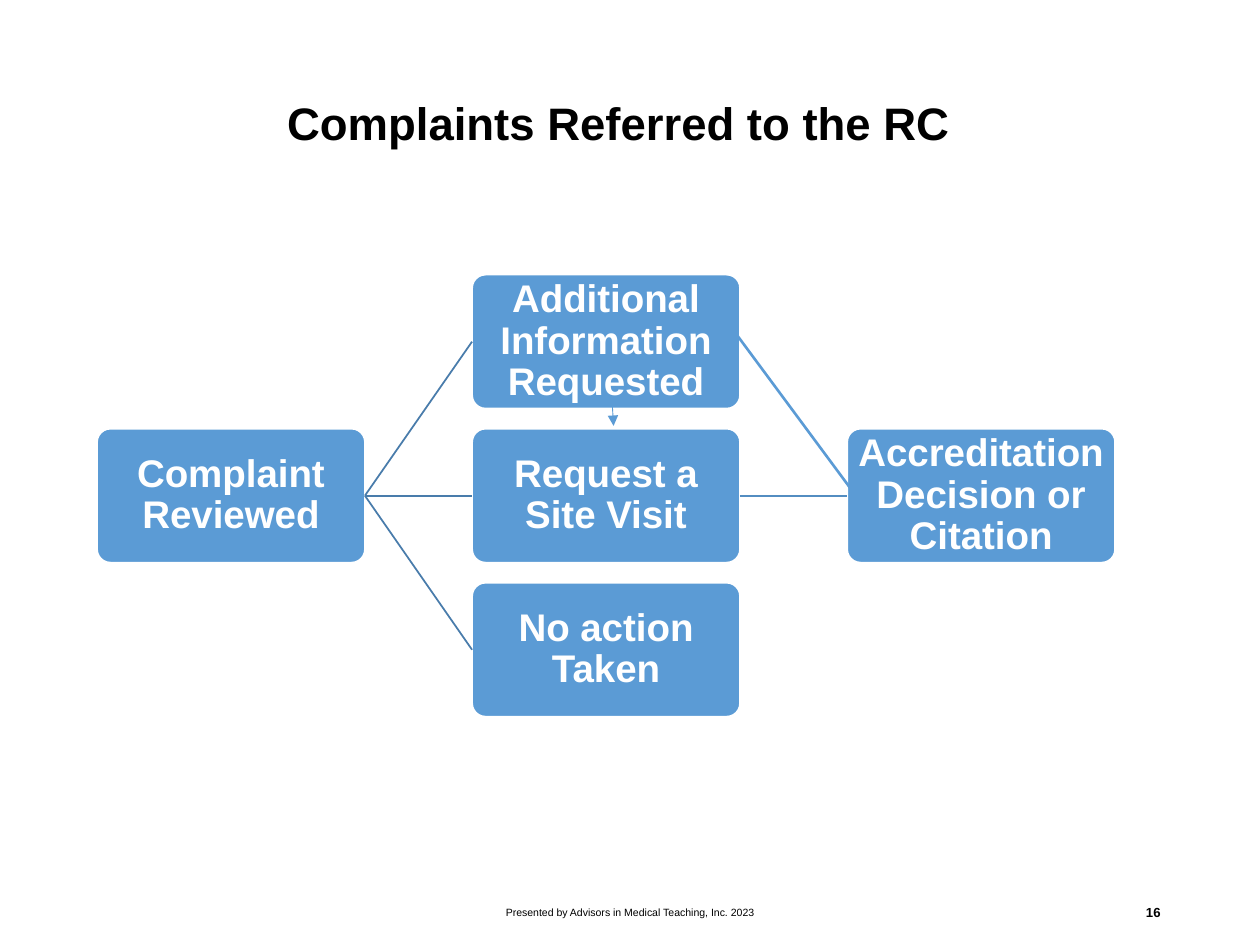
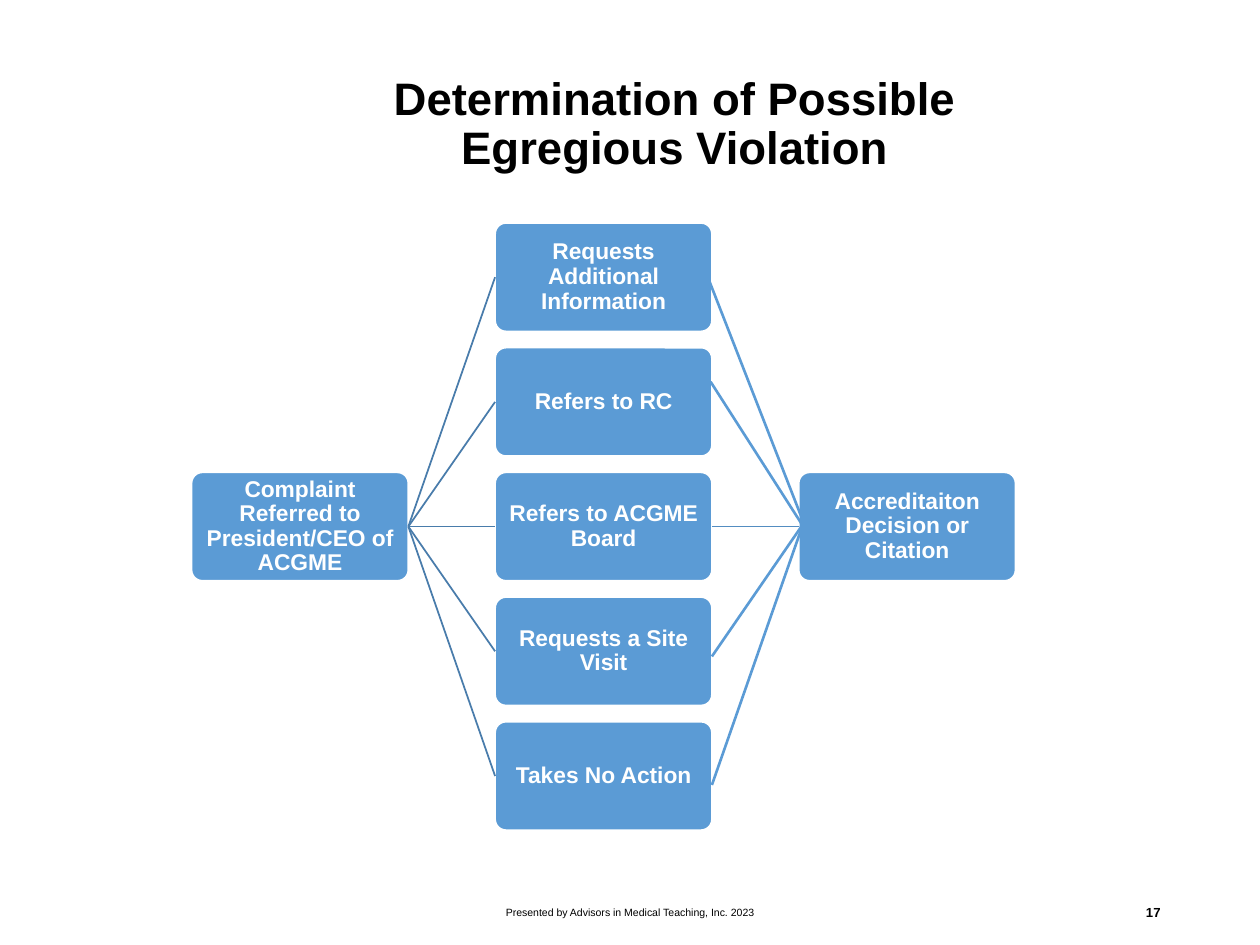
from dataclasses import dataclass

import lxml.etree
import pptx
import pptx.dml.color
import pptx.enum.shapes
import pptx.enum.text
import pptx.oxml.ns
import pptx.util

ALIGN = pptx.enum.text.PP_ALIGN
SHAPE = pptx.enum.shapes.MSO_SHAPE
STRAIGHT = pptx.enum.shapes.MSO_CONNECTOR.STRAIGHT
LEFT, RIGHT = 1, 3
COLS, ROWS = 100, 75


@dataclass(frozen=True)
class Theme:
    font: str = "Arial"
    node: str = "5B9BD5"
    light: str = "FFFFFF"
    dark: str = "000000"
    fan: str = "497CAB"
    result: str = "538DC1"
    title_size: float = 26
    footer_size: float = 6
    number_size: float = 7.5
    thin: float = 0.5
    normal: float = 1
    thick: float = 1.5


T = Theme()
FOOTER = "Presented by Advisors in Medical Teaching, Inc. 2023"


def grid(n):
    return pptx.util.Inches(n / 10)


def rgb(value):
    return pptx.dml.color.RGBColor.from_string(value)


def write(sp, text, size, color=T.dark, bold=False, align=ALIGN.CENTER, spacing=None, inset=None):
    tf = sp.text_frame
    tf.word_wrap = True
    tf.vertical_anchor = pptx.enum.text.MSO_ANCHOR.MIDDLE
    if inset is not None:
        tf.margin_left = tf.margin_right = tf.margin_top = tf.margin_bottom = grid(inset)
    p = tf.paragraphs[0]
    p.alignment = align
    if spacing:
        p.line_spacing = spacing
    r = p.add_run()
    r.text = text
    r.font.name, r.font.size, r.font.bold = T.font, pptx.util.Pt(size), bold
    r.font.color.rgb = rgb(color)


def add_text(s, box, text, size, **fmt):
    write(s.shapes.add_textbox(*map(grid, box)), text, size, **fmt)


def add_line(s, start, end, color, width, arrow=False):
    cx = s.shapes.add_connector(STRAIGHT, *map(grid, start + end))
    cx.line.color.rgb = rgb(color)
    cx.line.width = pptx.util.Pt(width)
    qn = pptx.oxml.ns.qn
    sp_pr = cx._element.spPr
    if arrow:
        lxml.etree.SubElement(sp_pr.find(qn("a:ln")), qn("a:tailEnd"), type="triangle")
    lxml.etree.SubElement(sp_pr, qn("a:effectLst"))
    return cx


def join(s, a, a_side, b, b_side, color):
    cx = add_line(s, (0, 0), (0, 0), color, T.normal)
    cx.begin_connect(a, a_side)
    cx.end_connect(b, b_side)


def add_node(s, x, y, w, h, text, size):
    sp = s.shapes.add_shape(SHAPE.ROUNDED_RECTANGLE, *map(grid, (x, y, w, h)))
    sp.adjustments[0] = 0.1
    sp.shadow.inherit = False
    sp.fill.solid()
    sp.fill.fore_color.rgb = rgb(T.node)
    sp.line.color.rgb = rgb(T.light)
    sp.line.width = pptx.util.Pt(T.normal)
    write(sp, text, size, color=T.light, bold=True, spacing=0.9, inset=0.01 * w)
    return sp


def add_flow(s, box, size, source, options, outcome, links, arrows=()):
    x, y, width = box
    w = width / 3.8
    h = w / 2
    col, row = 1.4 * w, 1.15 * h
    middle = len(options) // 2

    def node(c, r, text):
        return add_node(s, x + c * col, y + r * row, w, h, text, size)

    first = node(0, middle, source)
    nodes = [node(1, i, text) for i, text in enumerate(options)]
    last = node(2, middle, outcome)
    for option in nodes:
        join(s, first, RIGHT, option, LEFT, T.fan)
    join(s, nodes[middle], RIGHT, last, LEFT, T.result)
    for group, line_width, arrow in ((arrows, T.thin, True), (links, T.thick, False)):
        for x1, y1, x2, y2 in group:
            add_line(s, (x + x1, y + y1), (x + x2, y + y2), T.node, line_width, arrow)


def add_footer(s, box, number):
    x, y, w, h = box
    add_text(s, (x, y, 33.8, h), FOOTER, T.footer_size)
    add_text(s, (x + w - 22.5, y, 22.5, h), str(number), T.number_size, bold=True, align=ALIGN.RIGHT)


def flow_slide(prs, number, title, title_width, title_align, **flow):
    s = prs.slides.add_slide(prs.slide_layouts[6])
    add_text(s, (21.8, 2.7, title_width, 14.5), title, T.title_size,
             bold=True, align=title_align, spacing=0.9)
    add_footer(s, (33.1, 70.4, 60, 4), number)
    add_flow(s, **flow)


def main():
    prs = pptx.Presentation()
    prs.slide_width, prs.slide_height = grid(COLS), grid(ROWS)
    flow_slide(
        prs, 16, "Complaints Referred to the RC", 71.4, ALIGN.LEFT,
        box=(7.7, 21.8, 80.8), size=22,
        source="Complaint Reviewed",
        options=["Additional Information Requested", "Request a Site Visit", "No action Taken"],
        outcome="Accreditation Decision or Citation",
        arrows=[(40.9, 10.4, 41, 12)],
        links=[(50.5, 4.4, 59.9, 17.1)])
    flow_slide(
        prs, 17, "Determination of Possible Egregious Violation", 63.5, ALIGN.CENTER,
        box=(15.2, 17.7, 65.4), size=13,
        source="Complaint Referred to President/CEO of ACGME",
        options=["Requests Additional Information", "Refers to RC", "Refers to ACGME Board",
                 "Requests a Site Visit", "Takes No Action"],
        outcome="Accreditaiton Decision or Citation",
        links=[(40.9, 4.1, 48.9, 24.6), (48.6, 23.8, 41.3, 34.4),
               (41.2, 12.6, 48.5, 24), (41.3, 44.6, 48.5, 24)])
    prs.save("out.pptx")


if __name__ == "__main__":
    main()
